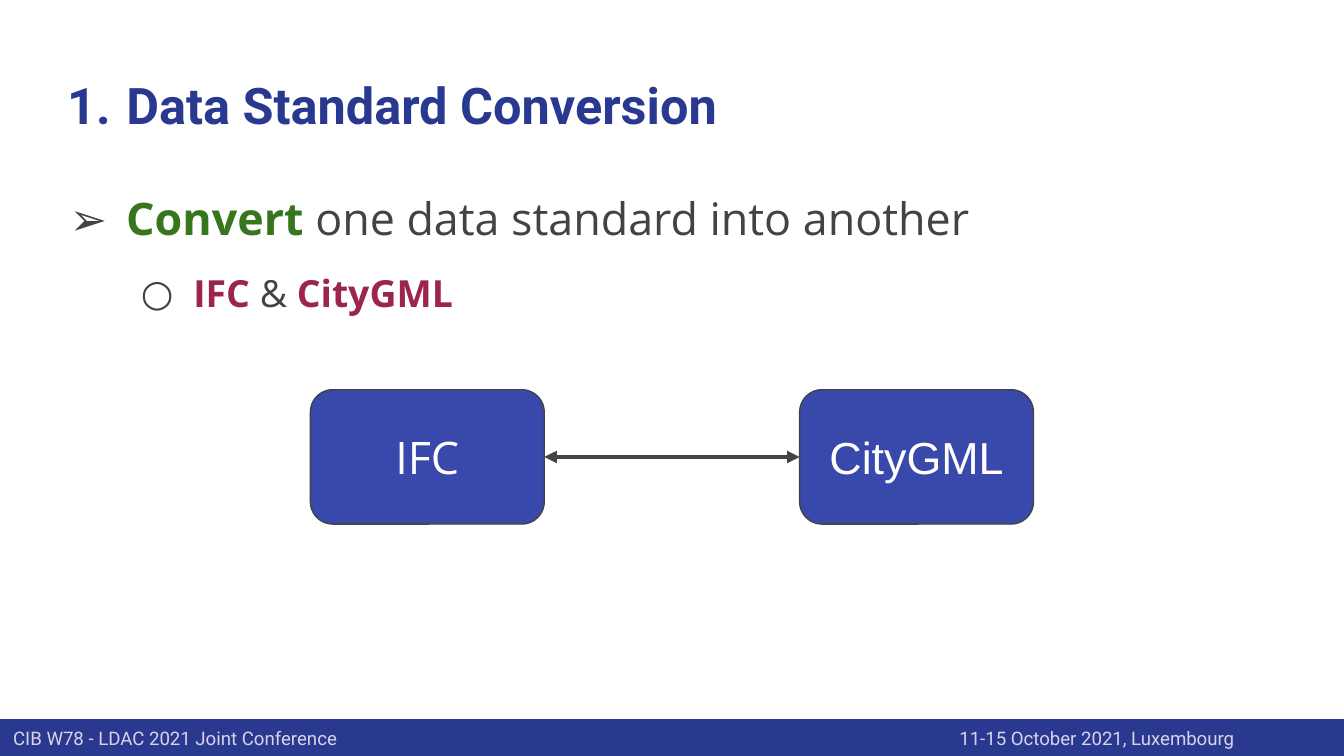
from lxml import etree
from pptx import Presentation
from pptx import util as u
from pptx.dml.color import RGBColor
from pptx.enum import shapes, text
from pptx.oxml.ns import qn

NAVY, BLUE, GRAY, WHITE = "2A3990", "3949AB", "434343", "FFFFFF"
GREEN, WINE, LILAC = "38761D", "9C254D", "D9D2E9"


def rgb(color):
    return RGBColor.from_string(color)


def sub(parent, tag, **attrs):
    return etree.SubElement(parent, qn(tag), attrs)


def add_run(p, words, font, size, color, bold=False):
    r = p.add_run()
    r.text = words
    r.font.name, r.font.size, r.font.bold = font, u.Pt(size), bold
    r.font.color.rgb = rgb(color)


def set_bullet(p, indent, hanging, color, font, kind, **attrs):
    pPr = p._p.get_or_add_pPr()
    pPr.set("marL", str(u.Inches(indent)))
    pPr.set("indent", str(-u.Inches(hanging)))
    sub(sub(pPr, "a:buClr"), "a:srgbClr", val=color)
    sub(pPr, "a:buFont", typeface=font)
    sub(pPr, kind, **attrs)


def set_frame(sp, anchor):
    tf = sp.text_frame
    tf.word_wrap = True
    tf.auto_size = text.MSO_AUTO_SIZE.NONE
    tf.vertical_anchor = anchor
    tf.margin_left = tf.margin_right = u.Inches(0.1)
    tf.margin_top = tf.margin_bottom = u.Inches(0.1)
    return tf


def add_box(slide, kind, x, y, w, h, fill):
    sp = slide.shapes.add_shape(kind, *map(u.Inches, (x, y, w, h)))
    sp.shadow.inherit = False
    sp.fill.solid()
    sp.fill.fore_color.rgb = rgb(fill)
    return sp


def add_footer(slide, x, y, w, h):
    sp = add_box(slide, shapes.MSO_SHAPE.RECTANGLE, x, y, w, h, NAVY)
    sp.line.fill.background()
    p = set_frame(sp, text.MSO_ANCHOR.MIDDLE).paragraphs[0]
    p.alignment = text.PP_ALIGN.LEFT
    tabs = sub(p._p.get_or_add_pPr(), "a:tabLst")
    sub(tabs, "a:tab", pos=str(u.Inches(7.04)), algn="l")
    add_run(p, "CIB W78 - LDAC 2021 Joint Conference\t11-15 October 2021, Luxembourg",
            "Roboto", 10, LILAC)


def set_title(slide, x, y, w, h):
    sp = slide.shapes.title
    sp.left, sp.top, sp.width, sp.height = map(u.Inches, (x, y, w, h))
    p = set_frame(sp, text.MSO_ANCHOR.TOP).paragraphs[0]
    p.alignment = text.PP_ALIGN.LEFT
    set_bullet(p, 0.5, 0.44, NAVY, "Roboto", "a:buAutoNum", type="arabicPeriod")
    add_run(p, "Data Standard Conversion", "Roboto", 27, NAVY, True)


def add_bullets(slide, x, y, w, h):
    sp = slide.shapes.add_textbox(*map(u.Inches, (x, y, w, h)))
    tf = set_frame(sp, text.MSO_ANCHOR.TOP)
    items = [
        ("➢", 0.42, 24, [("Convert ", GREEN, True),
                         ("one data standard into another", GRAY, False)]),
        ("○", 0.39, 20, [("IFC ", WINE, True), ("& ", GRAY, False),
                         ("CityGML", WINE, True)]),
    ]
    for level, (char, hanging, size, runs) in enumerate(items):
        p = tf.add_paragraph() if level else tf.paragraphs[0]
        p.level = level
        set_bullet(p, 0.5 * (level + 1), hanging, GRAY, "Open Sans",
                   "a:buChar", char=char)
        p.line_spacing = 1.15
        if level:
            p.space_before = u.Pt(10)
        for words, color, bold in runs:
            add_run(p, words, "Open Sans", size, color, bold)


def add_exchange(slide, x, y, w, h):
    """Two standards at the ends of the box, joined by a double arrow."""
    node_w = 1.74
    nodes = []
    for left, name, font in ((x, "IFC", "Open Sans"),
                             (x + w - node_w, "CityGML", "Arial")):
        sp = add_box(slide, shapes.MSO_SHAPE.FLOWCHART_ALTERNATE_PROCESS,
                     left, y, node_w, h, BLUE)
        sp.line.color.rgb = rgb(GRAY)
        sp.line.width = u.Pt(0.75)
        p = set_frame(sp, text.MSO_ANCHOR.MIDDLE).paragraphs[0]
        p.alignment = text.PP_ALIGN.CENTER
        add_run(p, name, font, 24, WHITE)
        nodes.append(sp)

    arrow = slide.shapes.add_connector(shapes.MSO_CONNECTOR.STRAIGHT, 0, 0, 0, 0)
    arrow.begin_connect(nodes[0], 3)
    arrow.end_connect(nodes[1], 1)
    arrow.line.color.rgb = rgb(GRAY)
    arrow.line.width = u.Pt(2.25)
    ln = arrow.line._get_or_add_ln()
    for end in ("a:headEnd", "a:tailEnd"):
        sub(ln, end, type="triangle")
    sub(arrow._element.spPr, "a:effectLst")


def main():
    prs = Presentation()
    prs.slide_width = u.Inches(10)
    prs.slide_height = prs.slide_width * 9 // 16
    slide = prs.slides.add_slide(prs.slide_layouts[5])
    add_footer(slide, 0, 5.35, 10, 0.28)
    set_title(slide, 0.34, 0.45, 9.32, 0.66)
    add_bullets(slide, 0.34, 1.26, 9.32, 1.55)
    add_exchange(slide, 2.31, 2.9, 5.38, 1)
    prs.save("out.pptx")


if __name__ == "__main__":
    main()
